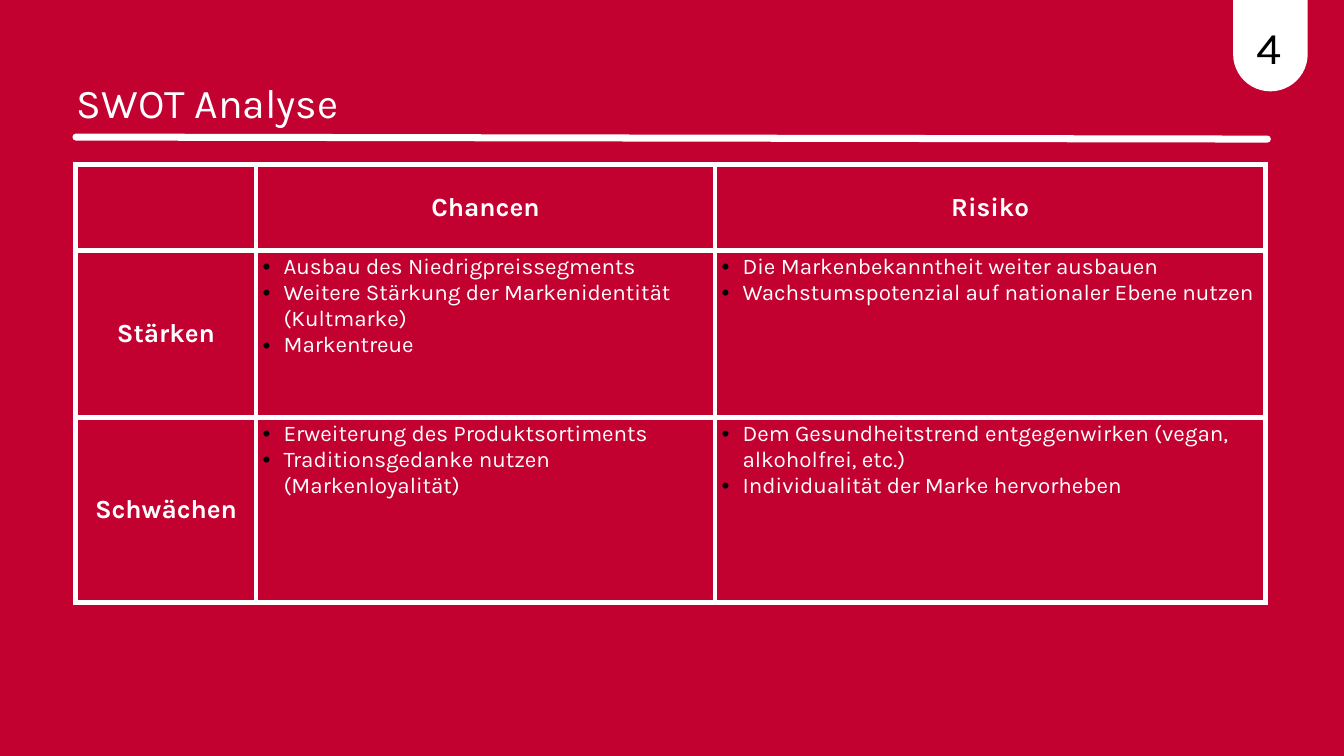
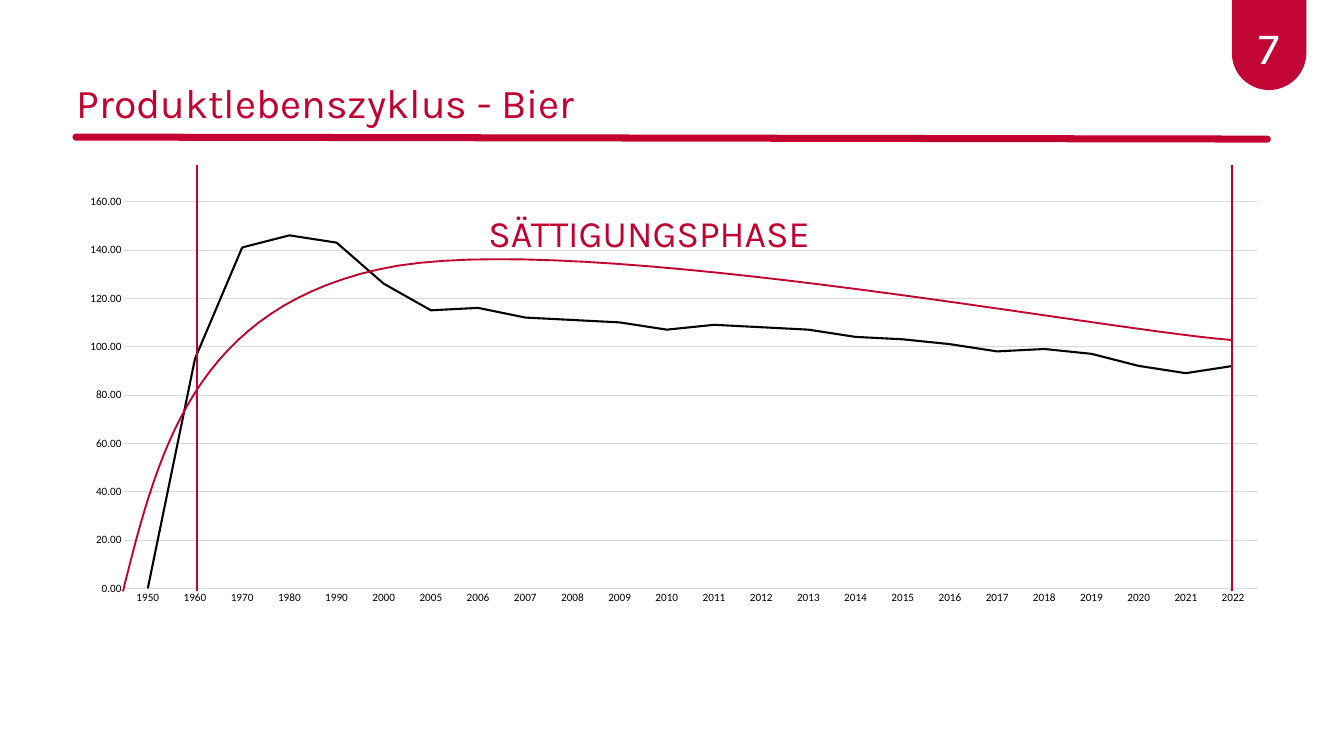
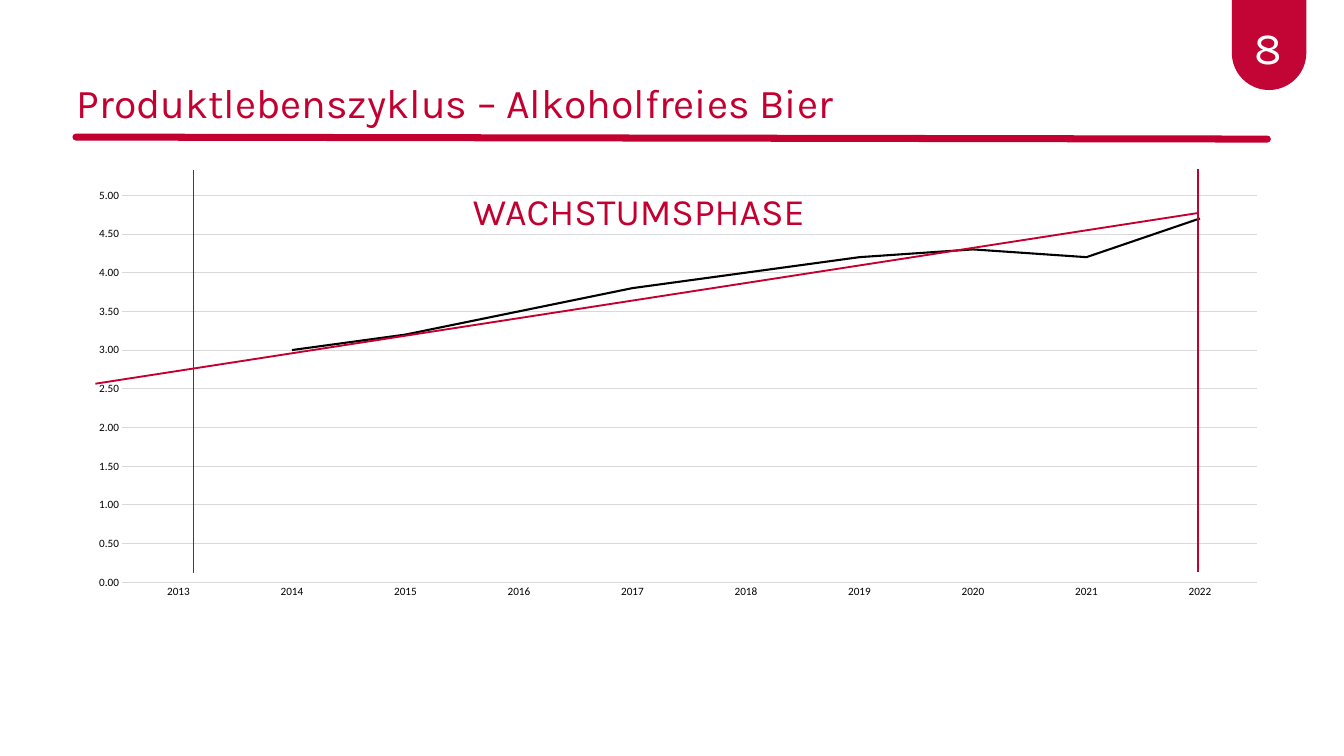
from dataclasses import dataclass
from typing import Optional

from lxml import etree
from pptx import Presentation
from pptx.chart.data import CategoryChartData
from pptx.dml.color import RGBColor
from pptx.enum.chart import XL_CHART_TYPE, XL_TICK_MARK
from pptx.enum.shapes import MSO_CONNECTOR, MSO_SHAPE
from pptx.enum.text import MSO_ANCHOR, MSO_AUTO_SIZE, PP_ALIGN
from pptx.oxml import parse_xml
from pptx.oxml.ns import nsdecls, qn
from pptx.util import Emu, Inches, Pt

LINE_CHART = XL_CHART_TYPE.LINE
NO_TICK = XL_TICK_MARK.NONE
STRAIGHT = MSO_CONNECTOR.STRAIGHT
TAB_SHAPE = MSO_SHAPE.ROUND_2_SAME_RECTANGLE
MIDDLE, TOP = MSO_ANCHOR.MIDDLE, MSO_ANCHOR.TOP
NO_AUTOFIT = MSO_AUTO_SIZE.NONE
LEFT, CENTER = PP_ALIGN.LEFT, PP_ALIGN.CENTER

SLIDE_WIDTH, SLIDE_HEIGHT = Inches(20), Inches(11.25)
GRID_COLUMNS, GRID_ROWS = 20, 11.25
TITLE_ONLY = 5
CURVE_STEPS = 30

Point = tuple[float, float]


@dataclass(frozen=True)
class Theme:
    red: str = "C30131"
    tab_red: str = "C20534"
    white: str = "FFFFFF"
    black: str = "000000"
    grid: str = "D9D9D9"
    font: str = "Karla"
    chart_font: str = "Calibri"
    number: float = 48
    title: float = 43.9
    phase: float = 40
    heading: float = 28
    body: float = 24
    axis: float = 12
    rule: float = 7.5
    border: float = 6
    series: float = 2.25
    marker: float = 2
    hairline: float = 0.75


@dataclass(frozen=True)
class Area:
    left: float
    top: float
    width: float
    height: float

    def emu(self) -> tuple[Emu, Emu, Emu, Emu]:
        return column(self.left), row(self.top), column(self.width), row(self.height)


@dataclass(frozen=True)
class Look:
    background: str
    ink: str
    tab: str
    number: str
    tab_area: Area


@dataclass(frozen=True)
class Phase:
    title: str
    number: str
    label: str
    label_area: Area
    chart_area: Area
    plot: Area
    categories: list[str]
    values: list[Optional[float]]
    maximum: float
    step: float
    boundaries: tuple[tuple[Point, Point], ...]
    trend: list[Point]


THEME = Theme()
DARK = Look(THEME.red, THEME.white, THEME.white, THEME.black, Area(18.35, 0, 1.11, 1.36))
LIGHT = Look(THEME.white, THEME.red, THEME.tab_red, THEME.white, Area(18.33, 0, 1.11, 1.34))
TITLE_AREA = Area(1.14, 1.03, 13.36, 0.78)
NUMBER_AREA = Area(18.54, 0.16, 0.68, 0.86)
RULE = ((1.13, 2.04), (18.86, 2.07))

TABLE_AREA = Area(1.13, 2.45, 17.7, 6.51)
TABLE_COLUMNS = (2.68, 6.83, 8.19)
TABLE_ROWS = (1.28, 2.48, 2.75)
SWOT = (
    ("", "Chancen", "Risiko"),
    (
        "Stärken",
        ["Ausbau des Niedrigpreissegments", "Weitere Stärkung der Markenidentität (Kultmarke)",
         "Markentreue"],
        ["Die Markenbekanntheit weiter ausbauen",
         "Wachstumspotenzial auf nationaler Ebene nutzen"],
    ),
    (
        "Schwächen",
        ["Erweiterung des Produktsortiments", "Traditionsgedanke nutzen (Markenloyalität)"],
        ["Dem Gesundheitstrend entgegenwirken (vegan, alkoholfrei, etc.)",
         "Individualität der Marke hervorheben"],
    ),
)


def column(count: float) -> Emu:
    return Emu(round(SLIDE_WIDTH * count / GRID_COLUMNS))


def row(count: float) -> Emu:
    return Emu(round(SLIDE_HEIGHT * count / GRID_ROWS))


def bezier(start: Point, first: Point, second: Point, end: Point) -> list[Point]:
    points = []
    for step in range(CURVE_STEPS + 1):
        t = step / CURVE_STEPS
        weights = ((1 - t) ** 3, 3 * t * (1 - t) ** 2, 3 * t * t * (1 - t), t ** 3)
        corners = (start, first, second, end)
        points.append((sum(w * p[0] for w, p in zip(weights, corners)),
                       sum(w * p[1] for w, p in zip(weights, corners))))
    return points


def write(para, text: str, *, size: float, color: str, bold: bool = False,
          align=LEFT, spacing: Optional[float] = None) -> None:
    para.alignment = align
    if spacing:
        para.line_spacing = Pt(spacing)
    span = para.add_run()
    span.text = text
    span.font.name = THEME.font
    span.font.size = Pt(size)
    span.font.bold = bold
    span.font.color.rgb = RGBColor.from_string(color)


def prepare_frame(frame, inset: bool = True) -> None:
    frame.word_wrap = True
    frame.auto_size = NO_AUTOFIT
    frame.vertical_anchor = TOP
    if not inset:
        frame.margin_left = frame.margin_right = frame.margin_top = frame.margin_bottom = 0


def add_text(page, area: Area, text: str, *, inset: bool = True, **style) -> None:
    box = page.shapes.add_textbox(*area.emu())
    prepare_frame(box.text_frame, inset)
    write(box.text_frame.paragraphs[0], text, **style)


def add_line(page, start: Point, end: Point, color: str, width: float,
             rounded: bool = False) -> None:
    line = page.shapes.add_connector(
        STRAIGHT, column(start[0]), row(start[1]), column(end[0]), row(end[1]))
    line.line.color.rgb = RGBColor.from_string(color)
    line.line.width = Pt(width)
    properties = line._element.spPr
    if rounded:
        properties.find(qn("a:ln")).set("cap", "rnd")
    etree.SubElement(properties, qn("a:effectLst"))


def add_trend(page, points: list[Point]) -> None:
    corners = [(column(x), row(y)) for x, y in points]
    builder = page.shapes.build_freeform(*corners[0])
    builder.add_line_segments(corners[1:], close=False)
    trend = builder.convert_to_shape()
    trend.shadow.inherit = False
    trend.fill.background()
    trend.line.color.rgb = RGBColor.from_string(THEME.red)
    trend.line.width = Pt(THEME.marker)


def add_page(deck, look: Look, title: str, number: str):
    page = deck.slides.add_slide(deck.slide_layouts[TITLE_ONLY])
    page.background.fill.solid()
    page.background.fill.fore_color.rgb = RGBColor.from_string(look.background)

    heading = page.shapes.title
    heading.left, heading.top, heading.width, heading.height = TITLE_AREA.emu()
    prepare_frame(heading.text_frame, inset=False)
    write(heading.text_frame.paragraphs[0], title, size=THEME.title, color=look.ink, spacing=61.5)

    tab = page.shapes.add_shape(TAB_SHAPE, *look.tab_area.emu())
    tab.adjustments[0], tab.adjustments[1] = 0, 0.5
    tab.shadow.inherit = False
    tab.fill.solid()
    tab.fill.fore_color.rgb = RGBColor.from_string(look.tab)
    tab.line.fill.background()
    add_text(page, NUMBER_AREA, number, inset=False, size=THEME.number, color=look.number,
             align=CENTER, spacing=67.2)
    add_line(page, *RULE, look.ink, THEME.rule, rounded=True)
    return page


def add_bullet(para) -> None:
    properties = para._p.get_or_add_pPr()
    properties.set("marL", str(Inches(0.31)))
    properties.set("indent", str(-Inches(0.31)))
    for xml in (
        f'<a:buClr {nsdecls("a")}><a:srgbClr val="{THEME.black}"/></a:buClr>',
        f'<a:buFont {nsdecls("a")} typeface="Arial"/>',
        f'<a:buChar {nsdecls("a")} char="•"/>',
    ):
        properties.append(parse_xml(xml))


def add_borders(cell) -> None:
    properties = cell._tc.get_or_add_tcPr()
    for position, side in enumerate(("lnL", "lnR", "lnT", "lnB")):
        properties.insert(position, parse_xml(
            f'<a:{side} {nsdecls("a")} w="{Pt(THEME.border)}"><a:solidFill>'
            f'<a:srgbClr val="{THEME.white}"/></a:solidFill></a:{side}>'))


def fill_cell(cell, content: str | list[str]) -> None:
    cell.fill.background()
    add_borders(cell)
    frame = cell.text_frame
    if isinstance(content, str):
        cell.vertical_anchor = MIDDLE
        if content:
            write(frame.paragraphs[0], content, size=THEME.heading, color=THEME.white,
                  bold=True, align=CENTER)
        return
    for index, item in enumerate(content):
        para = frame.add_paragraph() if index else frame.paragraphs[0]
        add_bullet(para)
        write(para, item, size=THEME.body, color=THEME.white)


def add_swot_table(page) -> None:
    table = page.shapes.add_table(
        len(TABLE_ROWS), len(TABLE_COLUMNS), *TABLE_AREA.emu()).table
    table.first_row = table.horz_banding = False
    for table_column, width in zip(table.columns, TABLE_COLUMNS):
        table_column.width = column(width)
    for table_row, height, contents in zip(table.rows, TABLE_ROWS, SWOT):
        table_row.height = row(height)
        for cell, content in zip(table_row.cells, contents):
            fill_cell(cell, content)


def format_axis(axis) -> None:
    axis.major_tick_mark = axis.minor_tick_mark = NO_TICK
    font = axis.tick_labels.font
    font.name = THEME.chart_font
    font.size = Pt(THEME.axis)
    font.color.rgb = RGBColor.from_string(THEME.black)


def format_hairline(line) -> None:
    line.color.rgb = RGBColor.from_string(THEME.grid)
    line.width = Pt(THEME.hairline)


def place_plot(chart, plot: Area) -> None:
    plot_area = chart._chartSpace.chart.plotArea
    for layout in plot_area.findall(qn("c:layout")):
        plot_area.remove(layout)
    shares = (("x", plot.left), ("y", plot.top), ("w", plot.width), ("h", plot.height))
    modes = "".join(f'<c:{name}Mode val="edge"/>' for name in "xy")
    values = "".join(f'<c:{name} val="{share}"/>' for name, share in shares)
    plot_area.insert(0, parse_xml(
        f'<c:layout {nsdecls("c")}><c:manualLayout><c:layoutTarget val="inner"/>'
        f'{modes}{values}</c:manualLayout></c:layout>'))


def add_cycle_chart(page, phase: Phase) -> None:
    data = CategoryChartData(number_format="#,##0.00")
    data.categories = phase.categories
    data.add_series("Series 1", phase.values)
    chart = page.shapes.add_chart(LINE_CHART, *phase.chart_area.emu(), data).chart
    chart.has_legend = chart.has_title = False
    chart.font.name = THEME.chart_font
    chart.font.size = Pt(10)
    chart.plots[0].vary_by_categories = False

    format_axis(chart.category_axis)
    format_hairline(chart.category_axis.format.line)
    value_axis = chart.value_axis
    format_axis(value_axis)
    value_axis.format.line.fill.background()
    format_hairline(value_axis.major_gridlines.format.line)
    value_axis.minimum_scale, value_axis.maximum_scale = 0, phase.maximum
    value_axis.major_unit = phase.step
    value_axis.tick_labels.number_format = "#,##0.00"
    value_axis.tick_labels.number_format_is_linked = False

    series = chart.plots[0].series[0]
    series.smooth = False
    series.format.line.color.rgb = RGBColor.from_string(THEME.black)
    series.format.line.width = Pt(THEME.series)
    place_plot(chart, phase.plot)


def add_phase_page(deck, phase: Phase) -> None:
    page = add_page(deck, LIGHT, phase.title, phase.number)
    add_cycle_chart(page, phase)
    if len(phase.trend) > 2:
        add_trend(page, phase.trend)
    else:
        add_line(page, *phase.trend, THEME.red, THEME.marker)
    for start, end in phase.boundaries:
        add_line(page, start, end, THEME.red, THEME.marker)
    add_text(page, phase.label_area, phase.label, size=THEME.phase, color=THEME.red)


PHASES = (
    Phase(
        title="Produktlebenszyklus - Bier",
        number="7",
        label="SÄTTIGUNGSPHASE",
        label_area=Area(7.17, 3.08, 7.33, 0.77),
        chart_area=Area(1.14, 2.9, 17.72, 6.19),
        plot=Area(0.04, 0.016, 0.951, 0.93),
        categories=[str(year) for year in (*range(1950, 2001, 10), *range(2005, 2023))],
        values=[0, 95, 141, 146, 143, 126, 115, 116, 112, 111, 110, 107,
                109, 108, 107, 104, 103, 101, 98, 99, 97, 92, 89, 92],
        maximum=160,
        step=20,
        boundaries=(((2.93, 2.46), (2.93, 8.8)), ((18.33, 2.45), (18.33, 8.79))),
        trend=bezier((1.83, 8.8), (2.35, 6.72), (2.88, 4.63), (5.63, 4.01))
        + bezier((5.63, 4.01), (8.38, 3.38), (16.22, 4.89), (18.33, 5.06))[1:],
    ),
    Phase(
        title="Produktlebenszyklus – Alkoholfreies Bier",
        number="8",
        label="WACHSTUMSPHASE",
        label_area=Area(6.94, 2.75, 7.11, 0.77),
        chart_area=Area(1.13, 2.69, 17.93, 6.35),
        plot=Area(0.038, 0.034, 0.942, 0.907),
        categories=[str(year) for year in range(2013, 2023)],
        values=[None, 3, 3.2, 3.5, 3.8, 4, 4.2, 4.3, 4.2, 4.7],
        maximum=5,
        step=0.5,
        boundaries=(((2.88, 2.53), (2.88, 8.52)), ((17.83, 2.51), (17.83, 8.51))),
        trend=[(1.42, 5.71), (17.83, 3.17)],
    ),
)


def main() -> None:
    deck = Presentation()
    deck.slide_width, deck.slide_height = SLIDE_WIDTH, SLIDE_HEIGHT
    add_swot_table(add_page(deck, DARK, "SWOT Analyse", "4"))
    for phase in PHASES:
        add_phase_page(deck, phase)
    deck.save("out.pptx")


if __name__ == "__main__":
    main()
